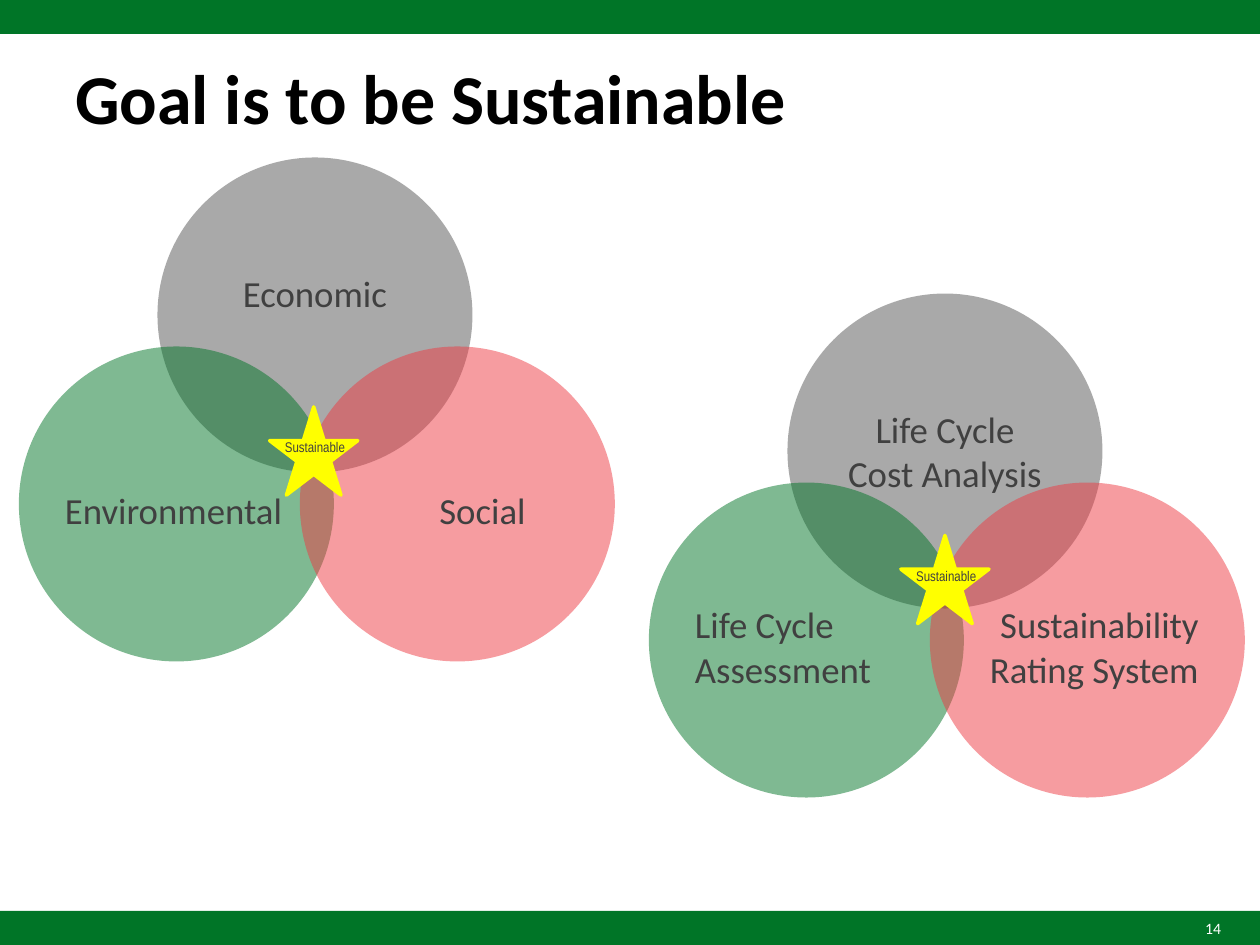
import pptx
import pptx.dml.color
import pptx.enum.shapes
import pptx.enum.text
import pptx.oxml
import pptx.oxml.ns
import pptx.util
from dataclasses import dataclass

KIND = pptx.enum.shapes.MSO_SHAPE
ALIGN = pptx.enum.text.PP_ALIGN
MIDDLE = pptx.enum.text.MSO_ANCHOR.MIDDLE
COLS, ROWS = 100, 75
CELL = pptx.util.Inches(0.1)


@dataclass(frozen=True)
class Theme:
    green: str = "007527"
    gray: str = "555555"
    red: str = "EE3A43"
    yellow: str = "FFFF00"
    white: str = "FFFFFF"
    black: str = "000000"
    ink: str = "404040"
    font: str = "Calibri"
    narrow: str = "Arial Narrow"
    title: int = 40
    label: int = 21
    page: int = 9
    small: int = 8


THEME = Theme()
LABEL = {"size": THEME.label, "name": THEME.font, "color": THEME.ink}


def cells(*counts):
    return [round(count * CELL) for count in counts]


def paint(fill, color, alpha=None):
    """Fill with one colour; alpha is the opacity in percent."""
    fill.solid()
    fill.fore_color.rgb = pptx.dml.color.RGBColor.from_string(color)
    if alpha:
        tint = fill._xPr.find(".//" + pptx.oxml.ns.qn("a:srgbClr"))
        tint.append(pptx.oxml.parse_xml(
            f'<a:alpha {pptx.oxml.ns.nsdecls("a")} val="{alpha * 1000}"/>'))


def write(shape, lines, style, align=ALIGN.LEFT, frame=None):
    """Set one paragraph per line; frame holds text frame values."""
    text = shape.text_frame
    for key, value in {"word_wrap": True, **(frame or {})}.items():
        setattr(text, key, value)
    text.text = "\n".join(lines)
    for para in text.paragraphs:
        para.alignment = align
        for key, value in style.items():
            if key == "color":
                para.font.color.rgb = pptx.dml.color.RGBColor.from_string(value)
            else:
                setattr(para.font, key, pptx.util.Pt(value) if key == "size" else value)


def draw(slide, kind, box, color, alpha=None, line=None):
    shape = slide.shapes.add_shape(kind, *cells(*box))
    shape.shadow.inherit = False
    paint(shape.fill, color, alpha)
    if line:
        paint(shape.line.fill, color)
        shape.line.width = pptx.util.Pt(line)
    else:
        shape.line.fill.background()
    return shape


def pad(left, top, right, bottom):
    sides = ("left", "top", "right", "bottom")
    return {f"margin_{side}": value
            for side, value in zip(sides, cells(left, top, right, bottom))}


def add_bars(slide, depth):
    for top in (ROWS - depth, 0):
        draw(slide, KIND.RECTANGLE, (0, top, COLS, depth), THEME.green)


def add_text(slide, box, words, style, align=ALIGN.LEFT, frame=None):
    shape = slide.shapes.add_textbox(*cells(*box))
    write(shape, [words], style, align, {"vertical_anchor": MIDDLE, **(frame or {})})


def add_star(slide, left, top, size):
    draw(slide, KIND.STAR_5_POINT, (left, top, size, size), THEME.yellow, line=2)
    style = {"size": THEME.small, "name": THEME.narrow, "color": THEME.ink}
    add_text(slide, (left + 0.2, top + 2, size - 0.2, 2.4), "Sustainable", style,
             ALIGN.CENTER, {"word_wrap": False})


def add_venn(slide, box, labels, star):
    """Draw three circles in the box; labels run top, left, right."""
    left, top, width, height = box
    size = height * 5 / 8
    spots = ((11, 0, THEME.gray), (0, height - size, THEME.green),
             (width - size, height - size, THEME.red))
    for (right, down, color), (lines, align, inset) in zip(spots, labels):
        ring = draw(slide, KIND.OVAL, (left + right, top + down, size, size), color, 50)
        write(ring, lines, LABEL, align, {"vertical_anchor": MIDDLE, **pad(*inset)})
    add_star(slide, left + star[0], top + star[1], 7)


def main():
    deck = pptx.Presentation()
    deck.slide_width, deck.slide_height = cells(COLS, ROWS)
    slide = deck.slides.add_slide(deck.slide_layouts[6])
    add_bars(slide, 2.7)
    add_text(slide, (5, 3.5, 90, 8.3), "Goal is to be Sustainable",
             {"size": THEME.title, "name": THEME.font, "color": THEME.black, "bold": True})
    low = (0, 1, 0, 0)
    add_venn(slide, (1.5, 12.5, 47.3, 40), (
        (["Economic"], ALIGN.CENTER, (1, 0.5, 1, 4)),
        (["Environmental"], ALIGN.LEFT, low),
        (["Social"], ALIGN.CENTER, (4, 1, 0, 0)),
    ), (19.9, 19.8))
    add_venn(slide, (51.5, 23.3, 47.3, 40), (
        (["Life Cycle", "Cost Analysis"], ALIGN.CENTER, (1, 0.5, 1, 0.5)),
        (["Life Cycle", "Assessment"], ALIGN.LEFT, low),
        (["Sustainability", "Rating System"], ALIGN.RIGHT, low),
    ), (20, 19.2))
    add_text(slide, (90.8, 72.4, 7.1, 2.6), "14",
             {"size": THEME.page, "name": THEME.font, "color": THEME.white}, ALIGN.RIGHT)
    deck.save("out.pptx")


if __name__ == "__main__":
    main()
